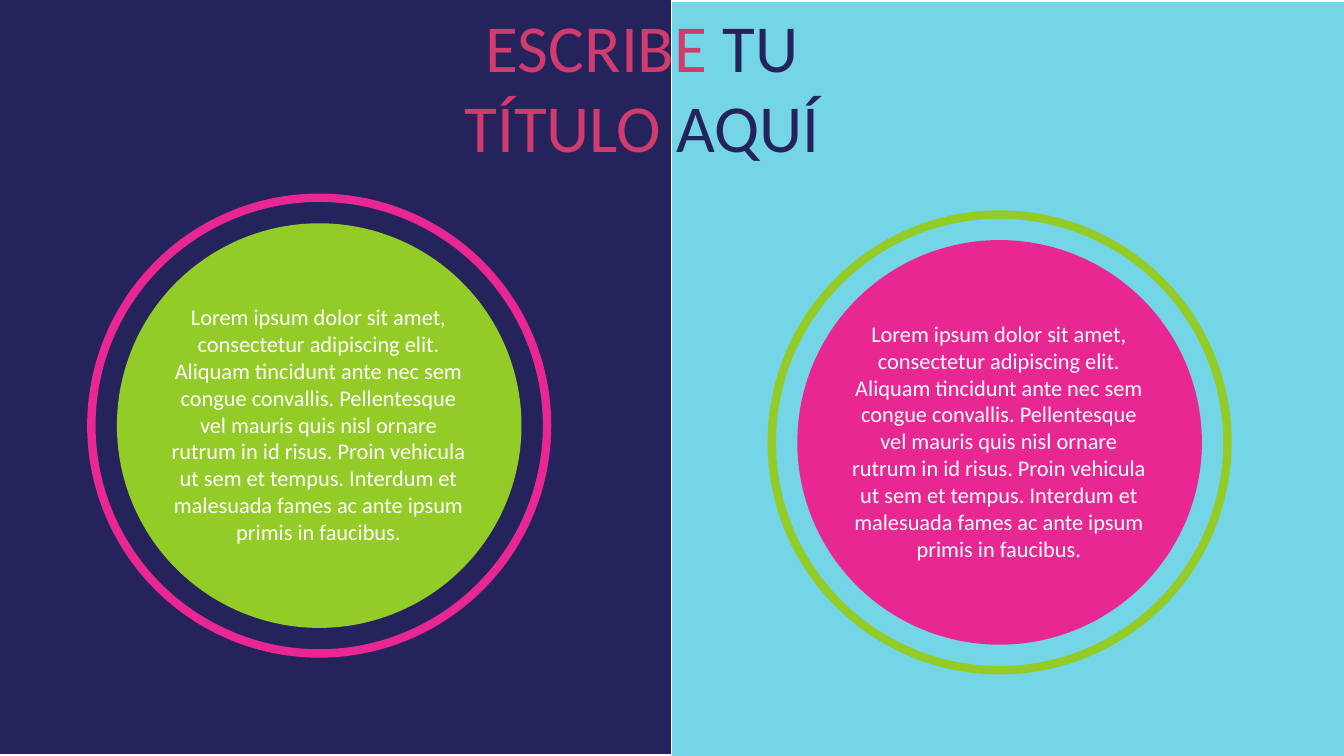
from dataclasses import dataclass

from lxml.etree import SubElement
from pptx import Presentation
from pptx.dml.color import RGBColor
from pptx.enum.shapes import MSO_SHAPE
from pptx.enum.text import MSO_ANCHOR, MSO_AUTO_SIZE, PP_ALIGN
from pptx.oxml.ns import qn
from pptx.util import Pt


@dataclass(frozen=True)
class Theme:
    font: str = "Calibri"
    title_size: int = 48
    body_size: int = 16
    ring_width: int = 6
    navy: str = "24235C"
    aqua: str = "00B3D0"
    green: str = "93CB27"
    pink: str = "E92793"
    rose: str = "D13B6E"
    white: str = "FFFFFF"


class SlideBuilder:
    """Draws themed elements on one slide, with all lengths in points."""

    def __init__(self, slide, theme):
        self.slide = slide
        self.theme = theme

    def shape(self, kind, left, top, width, height, fill=None, line=None, opacity=None):
        shape = self.slide.shapes.add_shape(kind, Pt(left), Pt(top), Pt(width), Pt(height))
        shape.shadow.inherit = False
        if fill:
            shape.fill.solid()
            shape.fill.fore_color.rgb = RGBColor.from_string(fill)
        else:
            shape.fill.background()
        if line:
            shape.line.color.rgb = RGBColor.from_string(line)
            shape.line.width = Pt(self.theme.ring_width)
        else:
            shape.line.fill.background()
        if opacity:
            color = shape.fill._xPr.find(qn("a:solidFill"))[0]
            SubElement(color, qn("a:alpha"), val=str(opacity * 1000))

    def panel(self, left, top, color, opacity=None):
        self.shape(MSO_SHAPE.RECTANGLE, left, top, 480, 540, fill=color, opacity=opacity)

    def circle(self, center_x, center_y, diameter, fill=None, line=None):
        radius = diameter / 2
        self.shape(MSO_SHAPE.OVAL, center_x - radius, center_y - radius,
                   diameter, diameter, fill, line)

    def format_paragraph(self, paragraph, size):
        paragraph.alignment = PP_ALIGN.CENTER
        paragraph.font.name = self.theme.font
        paragraph.font.size = Pt(size)

    def text(self, left, top, width, height, wording):
        box = self.slide.shapes.add_textbox(Pt(left), Pt(top), Pt(width), Pt(height))
        frame = box.text_frame
        frame.word_wrap = True
        frame.auto_size = MSO_AUTO_SIZE.SHAPE_TO_FIT_TEXT
        paragraph = frame.paragraphs[0]
        paragraph.text = wording
        self.format_paragraph(paragraph, self.theme.body_size)
        paragraph.font.color.rgb = RGBColor.from_string(self.theme.white)

    def badge(self, center_x, center_y, disc_color, ring_color, wording):
        self.circle(center_x, center_y, 289, fill=disc_color)
        self.text(center_x - 115, center_y - 91, 229, 201, wording)
        self.circle(center_x, center_y, 325.5, line=ring_color)

    def title(self, left, top, width, height, lines):
        title = self.slide.shapes.title
        title.left, title.top = Pt(left), Pt(top)
        title.width, title.height = Pt(width), Pt(height)
        title.element.getparent().append(title.element)
        frame = title.text_frame
        frame.word_wrap = True
        frame.auto_size = MSO_AUTO_SIZE.SHAPE_TO_FIT_TEXT
        frame.vertical_anchor = MSO_ANCHOR.TOP
        for index, words in enumerate(lines):
            paragraph = frame.add_paragraph() if index else frame.paragraphs[0]
            self.format_paragraph(paragraph, self.theme.title_size)
            for word, color in zip(words, (self.theme.rose, self.theme.navy)):
                run = paragraph.add_run()
                run.text = word
                run.font.color.rgb = RGBColor.from_string(color)


LOREM = (
    "Lorem ipsum dolor sit amet, consectetur adipiscing elit. Aliquam tincidunt "
    "ante nec sem congue convallis. Pellentesque vel mauris quis nisl ornare rutrum "
    "in id risus. Proin vehicula ut sem et tempus. Interdum et malesuada fames ac "
    "ante ipsum primis in faucibus."
)


def main():
    presentation = Presentation()
    presentation.slide_width = Pt(960)
    presentation.slide_height = Pt(540)
    slide = presentation.slides.add_slide(presentation.slide_layouts[5])
    theme = Theme()
    builder = SlideBuilder(slide, theme)

    builder.panel(480, 1.4, theme.aqua, opacity=55)
    builder.panel(-0.7, -1.4, theme.navy)
    builder.badge(228, 304, theme.green, theme.pink, LOREM)
    builder.badge(714, 316, theme.pink, theme.green, LOREM)
    builder.title(294.5, 0, 328.5, 124, [("ESCRIBE ", "TU"), ("TÍTULO ", "AQUÍ")])

    presentation.save("out.pptx")


if __name__ == "__main__":
    main()
